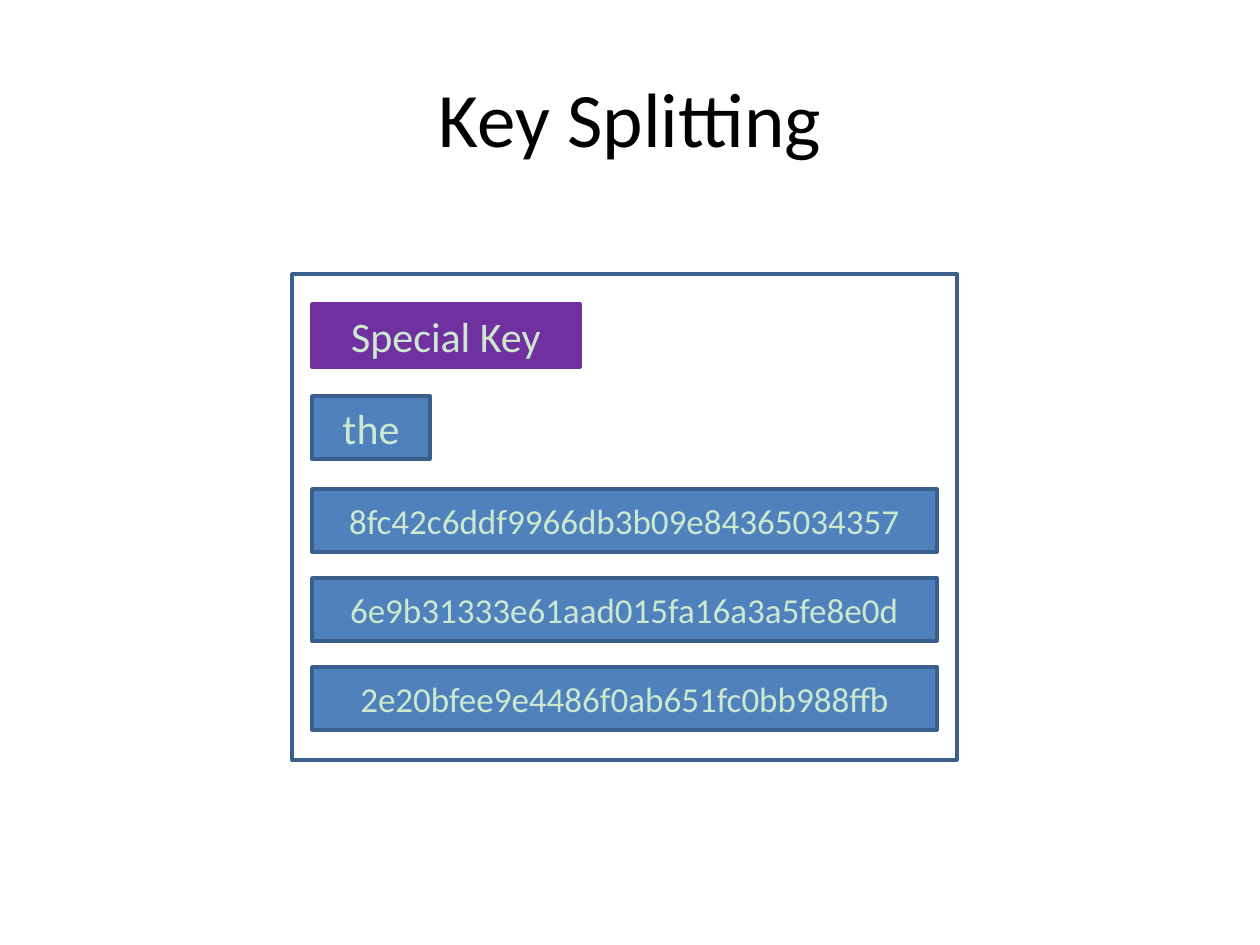
from dataclasses import dataclass
from typing import Optional

import pptx
import pptx.dml.color
import pptx.enum.shapes
import pptx.enum.text
import pptx.util

RGBColor = pptx.dml.color.RGBColor
BLACK = RGBColor(0x00, 0x00, 0x00)
WHITE = RGBColor(0xFF, 0xFF, 0xFF)
BLUE = RGBColor(0x4F, 0x81, 0xBD)
NAVY = RGBColor(0x3A, 0x5F, 0x8C)
PURPLE = RGBColor(0x70, 0x30, 0xA0)
MINT = RGBColor(0xCC, 0xE8, 0xCF)

FONT = "Calibri"
EMU_PER_PX = 914400 // 126
KEY_LEFT = 312
KEY_HEIGHT = 63
HASH_TOP = 489
HASH_STEP = 89
HASH_WIDTH = 625
HASHES = (
    "8fc42c6ddf9966db3b09e84365034357",
    "6e9b31333e61aad015fa16a3a5fe8e0d",
    "2e20bfee9e4486f0ab651fc0bb988ffb",
)


@dataclass(frozen=True)
class KeyBox:
    text: str
    top: int
    width: int
    size: int
    fill: RGBColor = BLUE
    line: RGBColor = NAVY


KEYS = [
    KeyBox("Special Key", 304, 268, 24, PURPLE, PURPLE),
    KeyBox("the", 396, 118, 24),
] + [
    KeyBox(text, HASH_TOP + row * HASH_STEP, HASH_WIDTH, 20)
    for row, text in enumerate(HASHES)
]


def px(length: int) -> pptx.util.Emu:
    return pptx.util.Emu(length * EMU_PER_PX)


def write_centred(shape, text: str, size: int, color: RGBColor) -> None:
    frame = shape.text_frame
    frame.text = text
    frame.word_wrap = True
    frame.vertical_anchor = pptx.enum.text.MSO_ANCHOR.MIDDLE
    para = frame.paragraphs[0]
    para.alignment = pptx.enum.text.PP_ALIGN.CENTER
    font = para.runs[0].font
    font.name = FONT
    font.size = pptx.util.Pt(size)
    font.color.rgb = color


def add_box(page, left: int, top: int, width: int, height: int,
            fill: Optional[RGBColor], line: RGBColor):
    box = page.shapes.add_shape(
        pptx.enum.shapes.MSO_SHAPE.RECTANGLE,
        px(left), px(top), px(width), px(height))
    box.shadow.inherit = False
    if fill is None:
        box.fill.background()
    else:
        box.fill.solid()
        box.fill.fore_color.rgb = fill
    box.line.color.rgb = line
    box.line.width = pptx.util.Pt(2)
    return box


def add_key(page, key: KeyBox) -> None:
    box = add_box(page, KEY_LEFT, key.top, key.width, KEY_HEIGHT, key.fill, key.line)
    write_centred(box, key.text, key.size, MINT)


def add_title(page, text: str) -> None:
    title = page.shapes.title
    title.left, title.top = px(63), px(38)
    title.width, title.height = px(1134), px(158)
    write_centred(title, text, 44, BLACK)


def main() -> None:
    """Build the key splitting slide."""
    deck = pptx.Presentation()
    deck.slide_width = pptx.util.Inches(10)
    deck.slide_height = pptx.util.Inches(7.5)
    page = deck.slides.add_slide(deck.slide_layouts.get_by_name("Title Only"))
    page.background.fill.solid()
    page.background.fill.fore_color.rgb = WHITE
    add_title(page, "Key Splitting")
    for key in KEYS:
        add_key(page, key)
    add_box(page, 292, 274, 665, 486, None, NAVY)
    deck.save("out.pptx")


if __name__ == "__main__":
    main()
